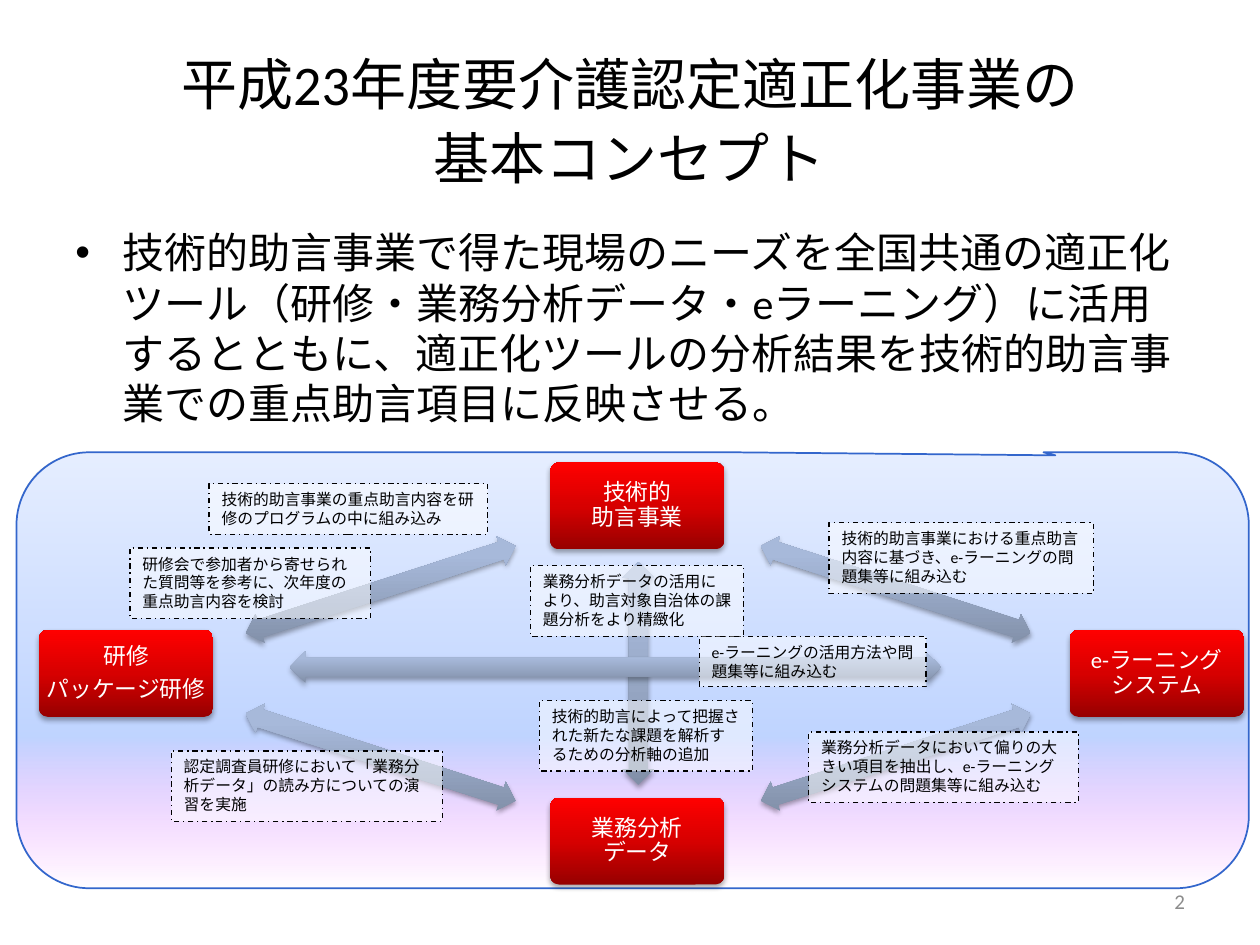
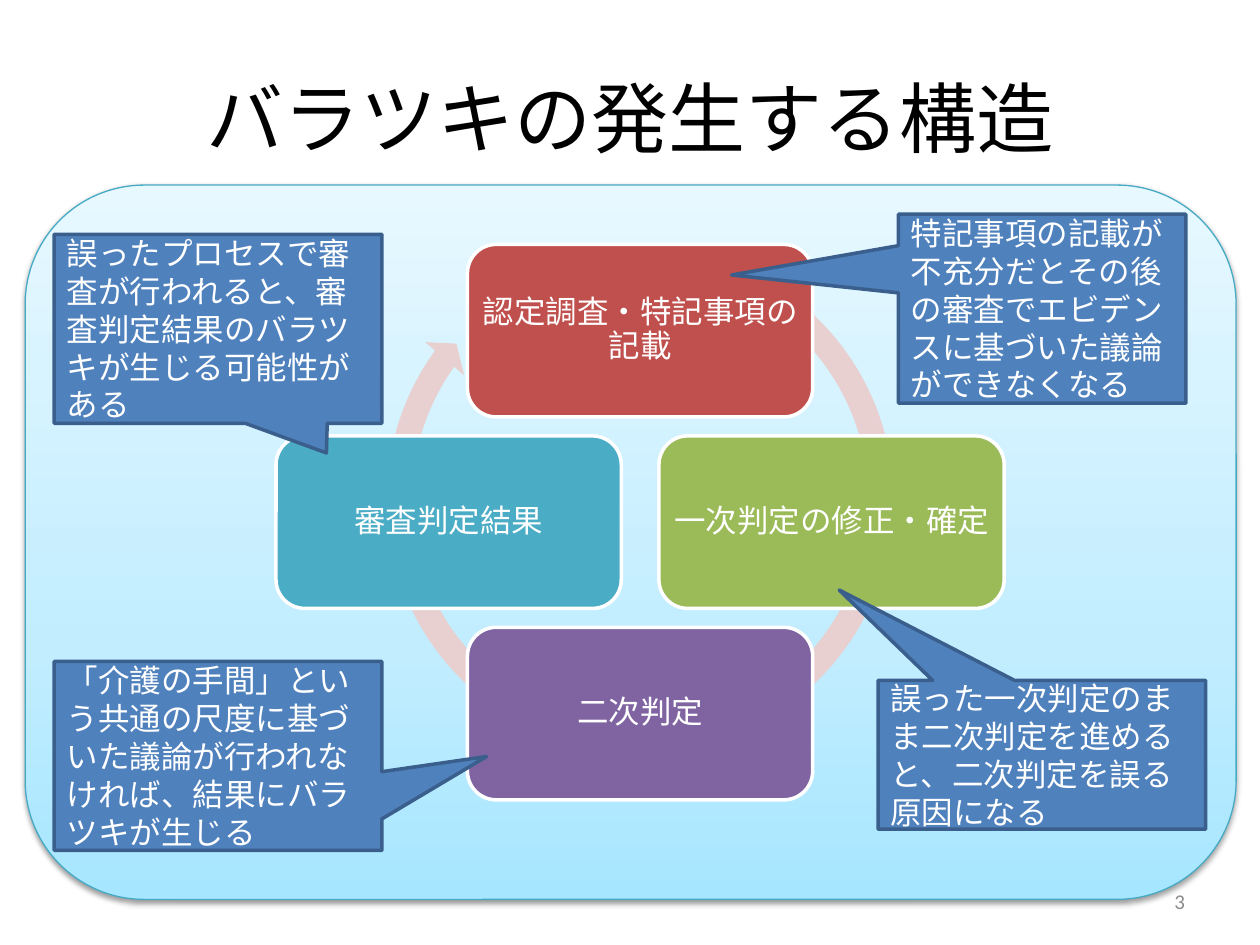
from collections import namedtuple

from lxml.etree import SubElement
from pptx import Presentation
from pptx.dml.color import RGBColor
from pptx.enum.dml import MSO_LINE
from pptx.enum.shapes import MSO_SHAPE as Preset
from pptx.enum.text import MSO_ANCHOR as Anchor, MSO_AUTO_SIZE as AutoSize, PP_ALIGN as Align
from pptx.oxml.ns import qn
from pptx.util import Pt

FONT = "Calibri"
TITLE_ONLY = 5
BLACK = RGBColor(0x00, 0x00, 0x00)
WHITE = RGBColor(0xFF, 0xFF, 0xFF)
GRAY = RGBColor(0x8C, 0x8C, 0x8C)
BLUE_LINE = RGBColor(0x33, 0x66, 0xCC)
TEAL_LINE = RGBColor(0x46, 0xAA, 0xC5)
CALLOUT_FILL = RGBColor(0x4F, 0x81, 0xBD)
CALLOUT_LINE = RGBColor(0x3A, 0x5F, 0x8C)
RING = RGBColor(0xE8, 0xD0, 0xD0)
RED = RGBColor(0xC0, 0x50, 0x4D)
GREEN = RGBColor(0x9B, 0xBB, 0x59)
PURPLE = RGBColor(0x80, 0x64, 0xA2)
TEAL = RGBColor(0x4B, 0xAC, 0xC6)

# Gradient stops run from bottom to top: position, colour, opacity in percent
PINK_TO_BLUE = [(0, RGBColor(0xFF, 0x99, 0xFF), 0), (35, RGBColor(0xBF, 0xD4, 0xFF), 100),
                (100, RGBColor(0xE6, 0xEE, 0xFF), 100)]
SKY = [(0, RGBColor(0xA7, 0xE6, 0xFF), 100), (35, RGBColor(0xC1, 0xED, 0xFF), 100),
       (100, RGBColor(0xE7, 0xF8, 0xFF), 100)]
DEEP_RED = [(0, RGBColor(0x97, 0x00, 0x00), 100), (50, RGBColor(0xD7, 0x00, 0x00), 100),
            (100, RGBColor(0xFF, 0x00, 0x00), 100)]
STEEL = [(0, RGBColor(0x81, 0x8F, 0xA8), 100), (80, RGBColor(0xA7, 0xB9, 0xDA), 100),
         (100, RGBColor(0xA7, 0xBA, 0xDC), 100)]

Box = namedtuple("Box", "left top width height")
TITLE_BOX = Box(36, 21.6, 648, 90)
BODY_BOX = Box(36, 126, 648, 130)
NUMBER_BOX = Box(516.2, 500.4, 168, 28.8)
CONCEPT_BOX = Box(9.4, 258.5, 704.2, 249.1)
CYCLE_BOX = Box(14.4, 105.8, 692, 408.2)


def inside(box, left, top, width, height):
    """Turn a place relative to a box into a place on the slide."""
    return Box(box.left + left, box.top + top, width, height)


def centred(box, x, y, width, height):
    return inside(box, x - width / 2, y - height / 2, width, height)


def write(frame, text, size, color, align=Align.LEFT, anchor=Anchor.MIDDLE,
          spacing=None, after=None, inset=None):
    frame.text = text
    frame.word_wrap = True
    frame.auto_size = AutoSize.NONE
    frame.vertical_anchor = anchor
    if inset is not None:
        frame.margin_left = frame.margin_right = Pt(inset)
        frame.margin_top = frame.margin_bottom = Pt(inset)
    for para in frame.paragraphs:
        para.alignment = align
        if spacing:
            para.line_spacing = spacing
        if after:
            para.space_after = Pt(after)
        for span in para.runs:
            span.font.name = FONT
            span.font.size = Pt(size)
            span.font.color.rgb = color


def set_opacity(color_element, percent):
    SubElement(color_element, qn("a:alpha"), val=str(percent * 1000))


def fill_gradient(shape, stops):
    shape.fill.gradient()
    shape.fill.gradient_angle = 90
    gradient = shape.element.spPr.find(qn("a:gradFill"))
    gradient.set("rotWithShape", "0")
    stop_list = gradient.find(qn("a:gsLst"))
    for old_stop in list(stop_list):
        stop_list.remove(old_stop)
    for position, color, opacity in stops:
        stop = SubElement(stop_list, qn("a:gs"), pos=str(position * 1000))
        value = SubElement(stop, qn("a:srgbClr"), val=str(color))
        if opacity < 100:
            set_opacity(value, opacity)


def add_shadow(shape, opacity=35):
    effects = shape.element.spPr.find(qn("a:effectLst"))
    shadow = SubElement(effects, qn("a:outerShdw"), blurRad=str(Pt(3.1)), dist=str(Pt(1.7)),
                        dir="5400000", rotWithShape="0")
    set_opacity(SubElement(shadow, qn("a:srgbClr"), val=str(BLACK)), opacity)


def add_preset(page, preset, box, fill, line=None, line_width=1, adjustments=()):
    """Add a shape whose fill is one colour or a list of gradient stops."""
    shape = page.shapes.add_shape(preset, *map(Pt, box))
    shape.shadow.inherit = False
    for index, value in enumerate(adjustments):
        shape.adjustments[index] = value
    if isinstance(fill, list):
        fill_gradient(shape, fill)
    else:
        shape.fill.solid()
        shape.fill.fore_color.rgb = fill
    if line is None:
        shape.line.fill.background()
    else:
        shape.line.color.rgb = line
        shape.line.width = Pt(line_width)
    return shape


def add_page(deck, title, title_size, number, title_spacing=1.0):
    """Start a slide with its title and slide number."""
    page = deck.slides.add_slide(deck.slide_layouts[TITLE_ONLY])
    heading = page.shapes.title
    heading.left, heading.top, heading.width, heading.height = map(Pt, TITLE_BOX)
    write(heading.text_frame, title, title_size, BLACK, Align.CENTER, spacing=title_spacing)
    number_box = page.shapes.add_textbox(*map(Pt, NUMBER_BOX))
    write(number_box.text_frame, str(number), 12, GRAY, Align.RIGHT)
    return page


def add_bullet_text(page, box, text):
    body = page.shapes.add_textbox(*map(Pt, box))
    write(body.text_frame, text, 24, BLACK, anchor=Anchor.TOP)
    for para in body.text_frame.paragraphs:
        properties = para._p.get_or_add_pPr()
        properties.set("marL", str(Pt(27)))
        properties.set("indent", str(-Pt(27)))
        SubElement(properties, qn("a:buFont"), typeface="Arial")
        SubElement(properties, qn("a:buChar"), char="•")


def add_double_arrow(page, box, angle=0):
    arrow = add_preset(page, Preset.LEFT_RIGHT_ARROW, box, STEEL, adjustments=(0.6, 0.5))
    arrow.rotation = angle
    add_shadow(arrow)


def add_note(page, box, text):
    note = add_preset(page, Preset.RECTANGLE, box, WHITE, BLACK, 0.75)
    note.line.dash_style = MSO_LINE.DASH_DOT
    set_opacity(note.element.spPr.find(qn("a:solidFill"))[0], 50)
    write(note.text_frame, text, 9, BLACK, anchor=Anchor.TOP)


def add_concept_diagram(page, box):
    """Four linked activities with notes on what passes between them."""
    add_preset(page, Preset.ROUNDED_RECTANGULAR_CALLOUT, box, PINK_TO_BLUE, BLUE_LINE, 1,
               (0.343, -0.493, 0.167))
    middle_x, middle_y = 355.3, 126.3

    # Activities
    activities = [
        (354.7, 30.6, "技術的\v助言事業"),
        (651.6, middle_y, "e-ラーニング\vシステム"),
        (354.7, 222.1, "業務分析\vデータ"),
        (62.6, middle_y, "研修\nパッケージ研修"),
    ]
    for x, y, text in activities:
        node = add_preset(page, Preset.ROUNDED_RECTANGLE, centred(box, x, y, 99.4, 49.7),
                          DEEP_RED, adjustments=(0.1,))
        add_shadow(node)
        write(node.text_frame, text, 13, WHITE, Align.CENTER, spacing=0.9, after=4.55, inset=2)

    # Diagonal, vertical and horizontal arrows
    for side in (-1, 1):
        for level in (-1, 1):
            place = centred(box, middle_x + side * 147.2, middle_y + level * 47.9, 162, 17.3)
            add_double_arrow(page, place, -17.9 * side * level)
    add_double_arrow(page, centred(box, middle_x, middle_y, 127.4, 18), 270)
    add_double_arrow(page, centred(box, 342.3, 122.7, 372.2, 18))

    # Notes
    two_lines, three_lines = 28.8, 40.3
    notes = [
        (88.5, 170.6, 154.8, three_lines,
         "認定調査員研修において「業務分析データ」の読み方についての演習を実施"),
        (452.8, 159.8, 154.1, three_lines,
         "業務分析データにおいて偏りの大きい項目を抽出し、e-ラーニングシステムの問題集等に組み込む"),
        (110.1, 18, 159.1, two_lines,
         "技術的助言事業の重点助言内容を研修のプログラムの中に組み込み"),
        (464.4, 40.3, 151.2, three_lines,
         "技術的助言事業における重点助言内容に基づき、e-ラーニングの問題集等に組み込む"),
        (293.7, 64.8, 121.7, three_lines,
         "業務分析データの活用により、助言対象自治体の課題分析をより精緻化"),
        (298.8, 141.8, 121.7, three_lines,
         "技術的助言によって把握された新たな課題を解析するための分析軸の追加"),
        (64.8, 54.7, 137.5, three_lines,
         "研修会で参加者から寄せられた質問等を参考に、次年度の重点助言内容を検討"),
        (390.2, 105.1, 129.6, two_lines,
         "e-ラーニングの活用方法や問題集等に組み込む"),
    ]
    for *place, text in notes:
        add_note(page, inside(box, *place), text)


def add_cycle_diagram(page, box):
    """Four steps around a ring, with callouts on how each goes wrong."""
    panel = add_preset(page, Preset.ROUNDED_RECTANGLE, box, SKY, TEAL_LINE, 0.75)
    add_shadow(panel, 38)
    middle_x, middle_y, reach = 351.4, 192.6, 109.4

    # Ring and steps
    add_preset(page, Preset.CIRCULAR_ARROW, centred(box, middle_x, middle_y - 12.9, 304.6, 304.6),
               RING, adjustments=(0.047, 2.729, 129.469, 179.526, 0.048))
    steps = [
        (0, -1, RED, "認定調査・特記事項の記載"),
        (1, 0, GREEN, "一次判定の修正・確定"),
        (0, 1, PURPLE, "二次判定"),
        (-1, 0, TEAL, "審査判定結果"),
    ]
    for across, down, color, text in steps:
        place = centred(box, middle_x + across * reach, middle_y + down * reach, 197.3, 98.6)
        step = add_preset(page, Preset.ROUNDED_RECTANGLE, place, color, WHITE, 2)
        write(step.text_frame, text, 18, WHITE, Align.CENTER, spacing=0.9, inset=0)

    # Callouts: place, tip and text
    callouts = [
        ((499, 16.6, 164.2, 108), (-1.081, -0.178),
         "特記事項の記載が不充分だとその後の審査でエビデンスに基づいた議論ができなくなる"),
        ((487.4, 283, 187.2, 85), (-0.619, -1.108),
         "誤った一次判定のまま二次判定を進めると、二次判定を誤る原因になる"),
        ((16.6, 272.2, 187.2, 108), (0.82, 0.003),
         "「介護の手間」という共通の尺度に基づいた議論が行われなければ、結果にバラツキが生じる"),
        ((16.6, 28.1, 187.2, 108), (0.331, 0.657),
         "誤ったプロセスで審査が行われると、審査判定結果のバラツキが生じる可能性がある"),
    ]
    for place, tip, text in callouts:
        callout = add_preset(page, Preset.RECTANGULAR_CALLOUT, inside(box, *place),
                             CALLOUT_FILL, CALLOUT_LINE, 2, tip)
        write(callout.text_frame, text, 18, WHITE)


def main():
    deck = Presentation()
    deck.slide_width, deck.slide_height = Pt(720), Pt(540)

    concept = add_page(deck, "平成23年度要介護認定適正化事業の\v基本コンセプト", 32, 2, 1.1)
    add_bullet_text(concept, BODY_BOX,
                    "技術的助言事業で得た現場のニーズを全国共通の適正化ツール"
                    "（研修・業務分析データ・eラーニング）に活用するとともに、"
                    "適正化ツールの分析結果を技術的助言事業での重点助言項目に反映させる。")
    add_concept_diagram(concept, CONCEPT_BOX)

    cycle = add_page(deck, "バラツキの発生する構造", 44, 3)
    add_cycle_diagram(cycle, CYCLE_BOX)

    deck.save("out.pptx")


if __name__ == "__main__":
    main()
